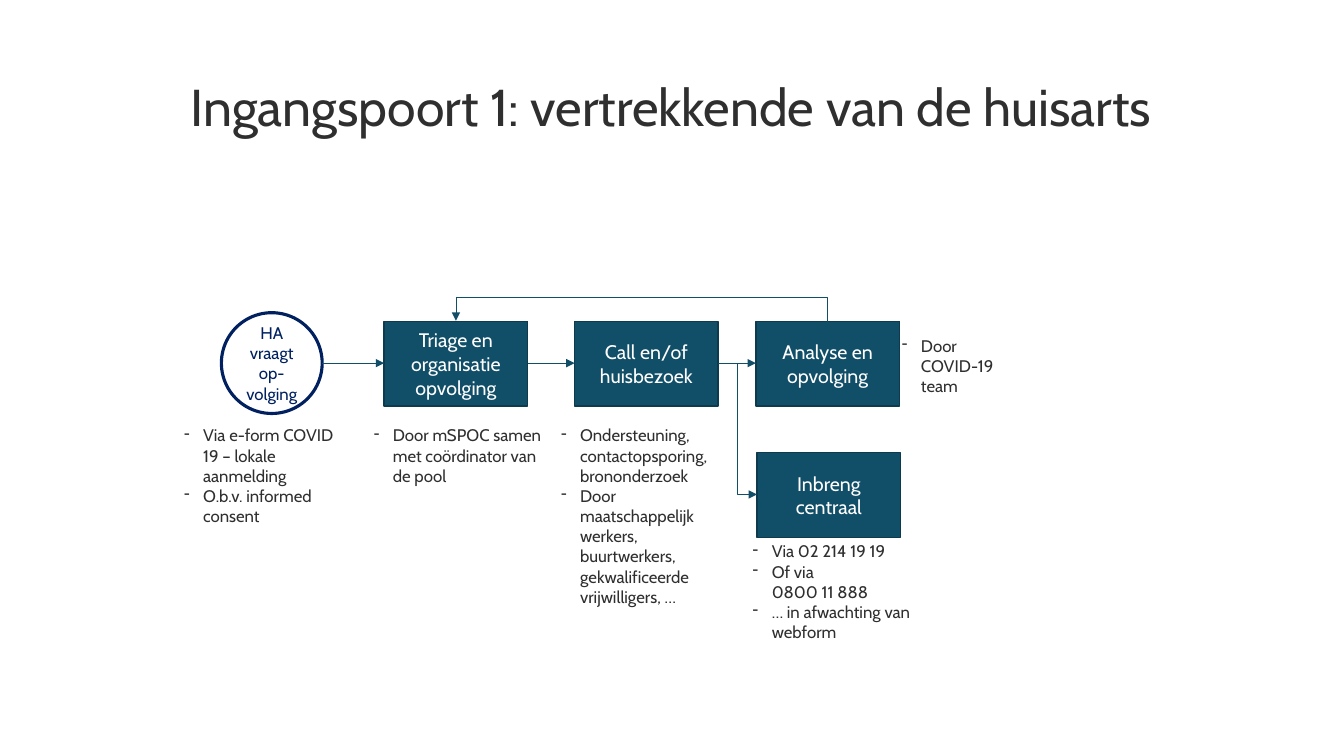
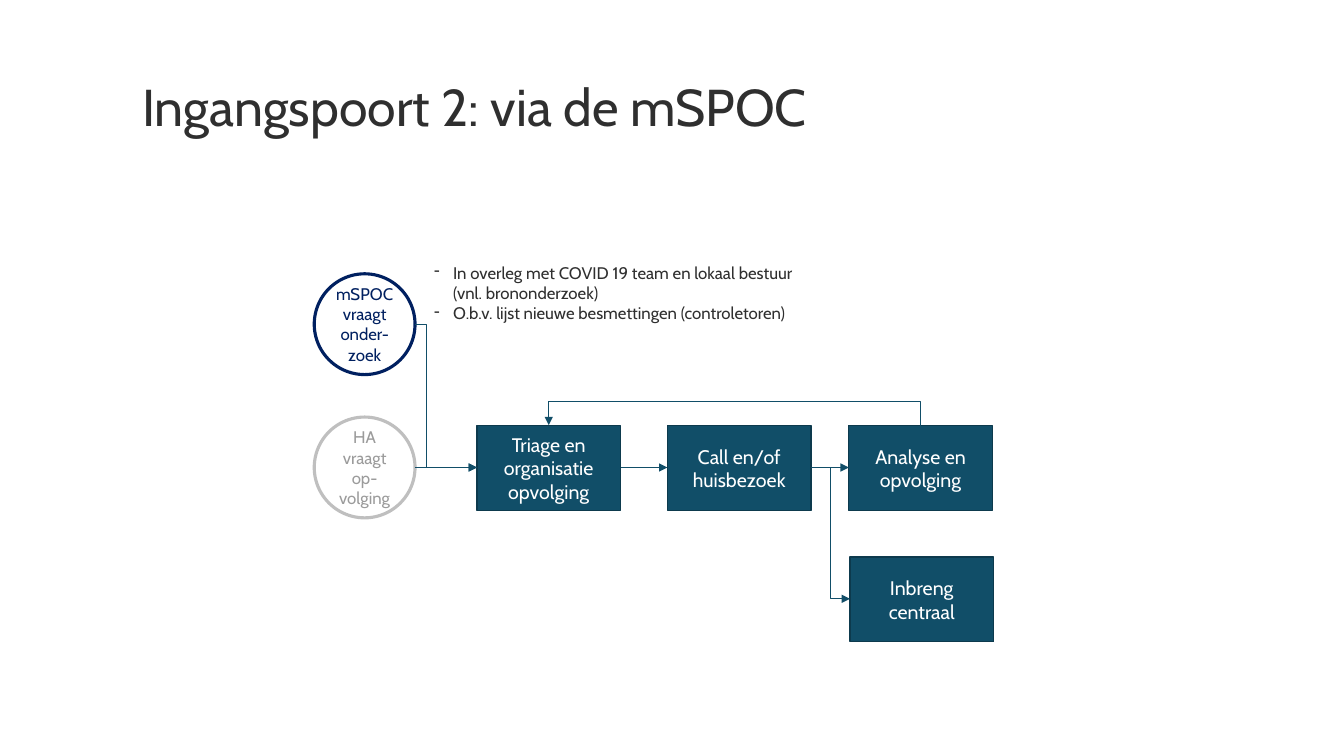
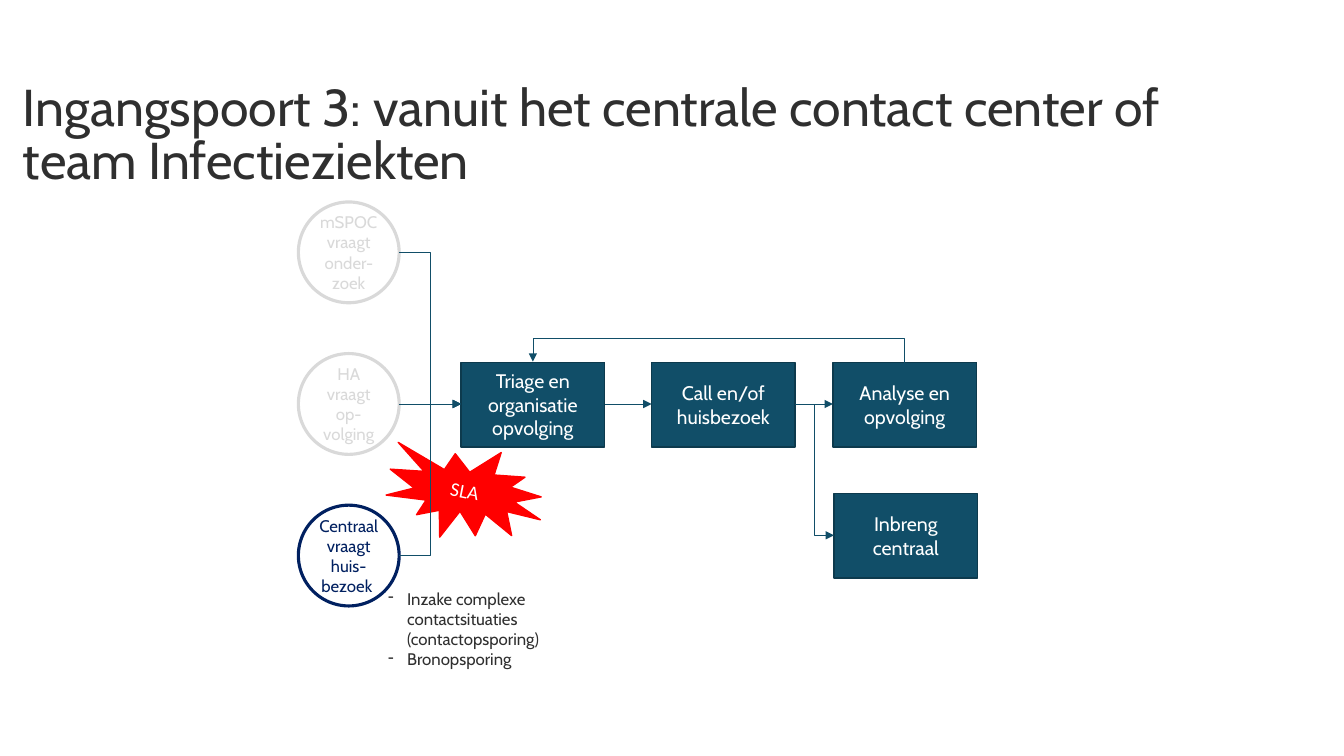
from copy import deepcopy

from pptx import Presentation
from pptx.dml.color import RGBColor
from pptx.enum.shapes import MSO_CONNECTOR, MSO_SHAPE
from pptx.enum.text import MSO_ANCHOR, PP_ALIGN
from pptx.oxml.ns import qn
from pptx.oxml.xmlchemy import OxmlElement
from pptx.util import Cm, Pt

BOX, OVAL, BURST = MSO_SHAPE.FLOWCHART_PROCESS, MSO_SHAPE.OVAL, MSO_SHAPE.EXPLOSION1
LINE, ELBOW = MSO_CONNECTOR.STRAIGHT, MSO_CONNECTOR.ELBOW
MIDDLE, CENTER = MSO_ANCHOR.MIDDLE, PP_ALIGN.CENTER

INK, TEAL, EDGE = "2F2F2F", "114E68", "0D3A4D"
WHITE, NAVY, RED = "FFFFFF", "002060", "FF0000"
GREY, SILVER, PALE = "9B9B9B", "BFBFBF", "D9D9D9"

HA = "HA vraagt op-volging"
SPOC = "mSPOC vraagt onder-zoek"


def color(code):
    return RGBColor.from_string(code)


def add(parent, tag, **attrs):
    node = OxmlElement(tag)
    for name, value in attrs.items():
        node.set(name, value)
    parent.append(node)


class Deck:
    font = "Cabin"
    wide, high = 3.62, 2.13
    mid = 1.05
    ring = 2.54
    gap = 1.56
    steps = ((0, "Triage en organisatie opvolging"),
             (4.8, "Call en/of huisbezoek"),
             (9.37, "Analyse en opvolging"))

    def __init__(self):
        self.prs = Presentation()
        self.prs.slide_width, self.prs.slide_height = Cm(33.87), Cm(19.05)

    def page(self, title, left):
        self.slide = self.prs.slides.add_slide(self.prs.slide_layouts[6])
        frame = self.area(left, 2.11, 32.26 - left, 3.1)
        self.inset(frame, 0, 0)
        self.label(frame, title, 37, INK)
        frame.paragraphs[0].line_spacing = Pt(38)

    def area(self, x, y, w, h):
        frame = self.slide.shapes.add_textbox(Cm(x), Cm(y), Cm(w), Cm(h)).text_frame
        frame.word_wrap = True
        return frame

    def inset(self, frame, side, top):
        frame.margin_left = frame.margin_right = Cm(side)
        frame.margin_top = frame.margin_bottom = Cm(top)

    def label(self, frame, text, size, ink, font=None):
        frame.text = text
        for par in frame.paragraphs:
            for run in par.runs:
                run.font.size = Pt(size)
                run.font.name = font or self.font
                run.font.color.rgb = color(ink)
            for gap in par._p.findall(qn("a:br")):
                gap.append(deepcopy(par.runs[0]._r.rPr))

    def shape(self, kind, x, y, w, h, text, size, fill, edge, weight, ink, font=None):
        shape = self.slide.shapes.add_shape(kind, Cm(x), Cm(y), Cm(w), Cm(h))
        shape.shadow.inherit = False
        shape.fill.solid()
        shape.fill.fore_color.rgb = color(fill)
        shape.line.color.rgb = color(edge)
        shape.line.width = Pt(weight)
        frame = shape.text_frame
        frame.word_wrap = True
        frame.vertical_anchor = MIDDLE
        self.label(frame, text, size, ink, font)
        frame.paragraphs[0].alignment = CENTER
        return shape

    def box(self, x, y, text):
        self.shape(BOX, x, y, self.wide, self.high, text, 14, TEAL, EDGE, 1, WHITE)

    def burst(self, x, y, w, h, text, angle):
        shape = self.shape(BURST, x, y, w, h, text, 14, RED, RED, 1, WHITE, "Calibri")
        shape.rotation = angle
        self.inset(shape.text_frame, 0, 0.13)

    def notes(self, x, y, w, h, *items):
        frame = self.area(x, y, w, h)
        self.label(frame, "\n".join(items), 12, INK)
        for par in frame.paragraphs:
            props = par._p.get_or_add_pPr()
            props.set("marL", str(Cm(0.48)))
            props.set("indent", str(-Cm(0.48)))
            add(props, "a:buChar", char="-")

    def arrow(self, x1, y1, x2, y2, bend=0.5):
        kind = LINE if y1 == y2 else ELBOW
        link = self.slide.shapes.add_connector(kind, Cm(x1), Cm(y1), Cm(x2), Cm(y2))
        link.line.color.rgb = color(TEAL)
        link.line.width = Pt(0.5)
        props = link._element.spPr
        add(props.find(qn("a:ln")), "a:tailEnd", type="triangle")
        add(props, "a:effectLst")
        if kind == ELBOW:
            add(props.find(qn("a:prstGeom")).get_or_add_avLst(), "a:gd",
                name="adj1", fmla=f"val {round(bend * 100000)}")
        return link

    def loop(self, x1, x2, y, rise=0.62, drop=0.03):
        x, half = (x1 + x2) / 2, (x1 - x2) / 2
        link = self.arrow(x - drop / 2, y + half, x + drop / 2, y - half, rise / drop)
        link._element.spPr.find(qn("a:xfrm")).set("rot", str(270 * 60000))

    def flow(self, x, y):
        self.x, self.y = x, y
        row = y + self.mid
        for dx, text in self.steps:
            self.box(x + dx, y, text)
        spots = [x + dx for dx, _ in self.steps]
        for start, end in zip(spots, spots[1:]):
            self.arrow(start + self.wide, row, end, row)
        side, down = 9.4, 3.31
        self.box(x + side, y + down, "Inbreng centraal")
        self.arrow(spots[1] + self.wide, row, x + side, row + down)
        self.loop(spots[2] + self.wide / 2, x + self.wide / 2, y)

    def entry(self, text, edge, ink, shift=0, bend=0.5):
        row = self.y + self.mid
        right = self.x - self.gap
        shape = self.shape(OVAL, right - self.ring, row + shift - self.ring / 2,
                           self.ring, self.ring, text, 12, WHITE, edge, 2.25, ink)
        self.inset(shape.text_frame, 0.1, 0)
        self.arrow(right, row + shift, self.x, row, bend)


def main():
    deck = Deck()

    deck.page("Ingangspoort 1: vertrekkende van de huisarts", 4.8)
    deck.flow(9.68, 8.1)
    deck.entry(HA, NAVY, NAVY)
    under = 10.59
    deck.notes(4.39, under, 4.75, 3, "Via e-form COVID 19 – lokale aanmelding",
               "O.b.v. informed consent")
    deck.notes(9.17, under, 4.75, 2.49, "Door mSPOC samen met coördinator van de pool")
    deck.notes(13.89, under, 4.83, 5.56, "Ondersteuning, contactopsporing, brononderzoek",
               "Door maatschappelijk werkers, buurtwerkers, gekwalificeerde vrijwilligers, …")
    deck.notes(18.72, 13.51, 4.75, 3.51, "Via 02 214 19 19", "Of via \v0800 11 888",
               "… in afwachting van webform")
    deck.notes(22.48, 8.33, 3.62, 1.27, "Door \vCOVID-19 team")

    deck.page("Ingangspoort 2: via de mSPOC", 3.58)
    deck.flow(12.02, 10.73)
    deck.entry(SPOC, NAVY, NAVY, -3.61, 0.18)
    deck.entry(HA, SILVER, GREY)
    deck.notes(10.69, 6.5, 9.93, 2.49,
               "In overleg met COVID 19 team en lokaal bestuur (vnl. brononderzoek)",
               "O.b.v. lijst nieuwe besmettingen (controletoren)")

    deck.page("Ingangspoort 3: vanuit het centrale contact center of team Infectieziekten", 0.58)
    deck.burst(9.75, 11.25, 3.96, 2.39, "SLA", 11.2)
    deck.flow(11.62, 9.13)
    deck.entry(SPOC, PALE, PALE, -3.82)
    deck.entry(HA, PALE, PALE)
    deck.entry("Centraal vraagt huis-bezoek ", NAVY, NAVY, 3.82)
    deck.notes(9.53, 14.71, 6.32, 2.31,
               "Inzake complexe contactsituaties (contactopsporing)", "Bronopsporing")

    deck.prs.save("out.pptx")


if __name__ == "__main__":
    main()
